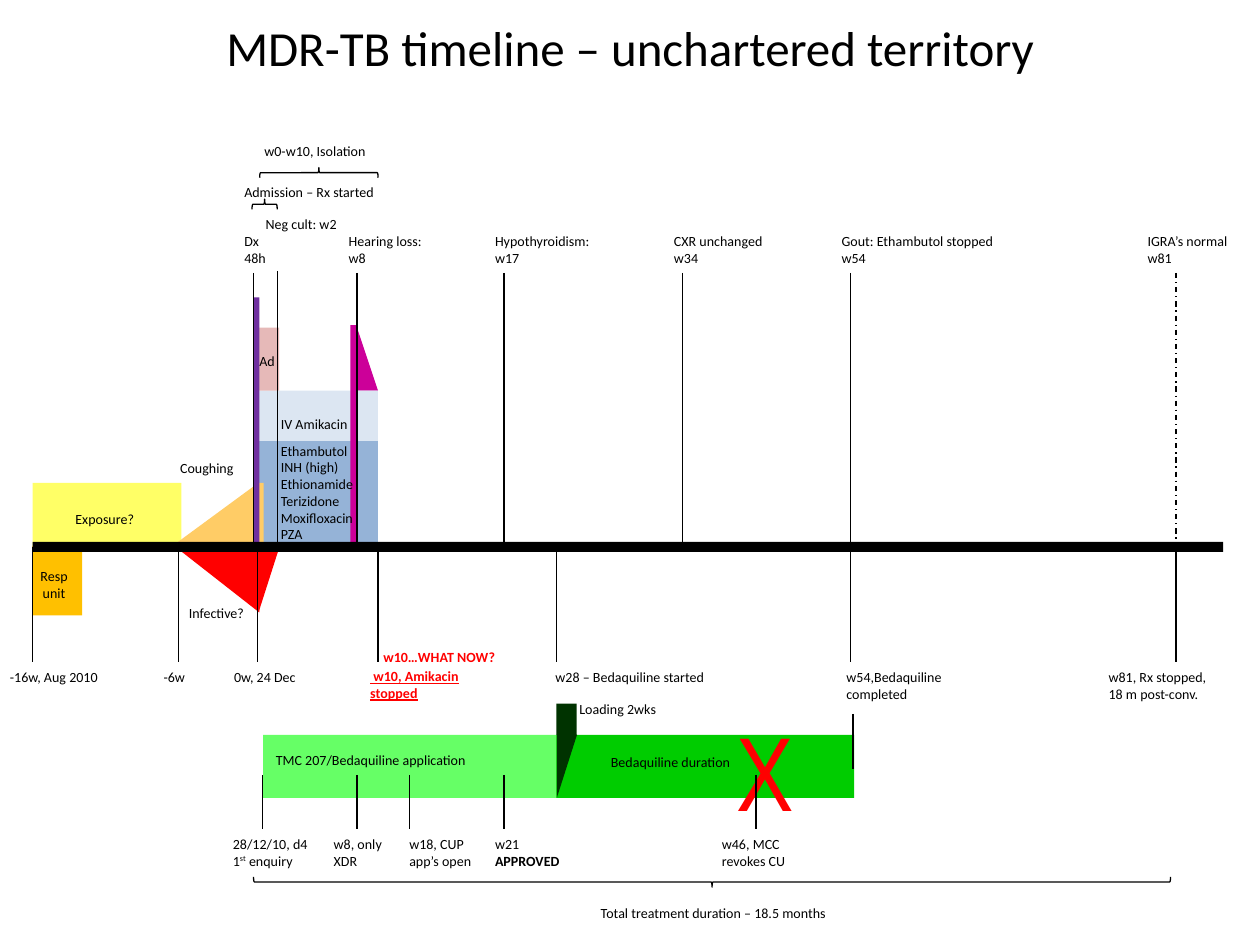
from dataclasses import dataclass

from lxml.etree import SubElement
from pptx import Presentation
from pptx.dml.color import RGBColor
from pptx.enum.dml import MSO_LINE
from pptx.enum.shapes import MSO_CONNECTOR, MSO_SHAPE
from pptx.enum.text import MSO_ANCHOR, MSO_AUTO_SIZE, PP_ALIGN
from pptx.oxml.ns import qn
from pptx.util import Pt


@dataclass(frozen=True)
class Theme:
    """Colours, fonts and sizes of the slide."""
    font: str = "Calibri"
    mark_font: str = "Arial Narrow"
    title: int = 28
    label: int = 8
    mark: int = 60
    line: float = 0.75
    black: str = "000000"
    red: str = "FF0000"
    magenta: str = "CC0099"
    pale_blue: str = "DCE6F2"
    blue: str = "95B3D7"
    yellow: str = "FFFF66"
    orange: str = "FFCC66"
    gold: str = "FFC000"
    pink: str = "E6B9B8"
    purple: str = "7030A0"
    light_green: str = "66FF66"
    green: str = "00CC00"
    dark_green: str = "003300"


T = Theme()
ROW_ABOVE, ROW_BELOW, ROW_ACCESS = 129.6, 378.4, 473.8

BLOCKS = [
    (MSO_SHAPE.RIGHT_TRIANGLE, (204, 187.2, 12, 36), 0, T.magenta),
    (MSO_SHAPE.RECTANGLE, (148, 223.2, 68, 36), 0, T.pale_blue),
    (MSO_SHAPE.RECTANGLE, (148, 252, 68, 60), 0, T.blue),
    (MSO_SHAPE.RECTANGLE, (18.6, 276, 85, 36), 0, T.yellow),
    (MSO_SHAPE.RIGHT_TRIANGLE, (105, 269.5, 36, 49), 270, T.orange),
    (MSO_SHAPE.RECTANGLE, (18.6, 312, 28.4, 39.6), 0, T.gold),
    (MSO_SHAPE.RECTANGLE, (148, 187.2, 11.5, 36), 0, T.pink),
    (MSO_SHAPE.RECTANGLE, (147, 276, 3.6, 36), 0, T.orange),
    (MSO_SHAPE.RECTANGLE, (144.6, 170, 3.6, 142), 0, T.purple),
    (MSO_SHAPE.RECTANGLE, (150.3, 420, 170, 36), 0, T.light_green),
    (MSO_SHAPE.RECTANGLE, (318, 420, 170.2, 36), 0, T.green),
    (MSO_SHAPE.RECTANGLE, (318, 402, 11.5, 18), 0, T.dark_green),
    (MSO_SHAPE.RIGHT_TRIANGLE, (306, 432, 36, 11.5), 90, T.dark_green),
    (MSO_SHAPE.RECTANGLE, (200.2, 185.8, 3.8, 127.2), 0, T.magenta),
    (MSO_SHAPE.RIGHT_TRIANGLE, (102.2, 314, 46, 36), 180, T.red),
    (MSO_SHAPE.RIGHT_TRIANGLE, (135.5, 326.2, 36, 11.5), 90, T.red),
]

BRACES = [
    ((148.3, 109.5, 5.8, 14.4), 90),
    ((179.3, 64.8, 5.8, 67.7), 90),
    ((404, 242, 5.8, 524), 270),
]

EVENTS = {
    ROW_ABOVE: [
        (132.5, 27, ["Dx", "48h"]),
        (192.2, 64, ["Hearing loss:", "w8"]),
        (275.8, 75, ["Hypothyroidism:", "w17"]),
        (378, 74, ["CXR unchanged", "w34"]),
        (473.8, 109.5, ["Gout: Ethambutol stopped", "w54"]),
        (648.7, 67, ["IGRA’s normal", "w81"]),
    ],
    ROW_BELOW: [
        (-1.4, 71.3, ["-16w, Aug 2010"]),
        (86.4, 27.4, ["-6w"]),
        (126.7, 55.4, ["0w, 24 Dec"]),
        (310.3, 110.2, ["w28 – Bedaquiline started"]),
        (476.6, 76.3, ["w54,Bedaquiline", "completed"]),
        (626.4, 77, ["w81, Rx stopped,", "18 m post-conv."]),
    ],
    ROW_ACCESS: [
        (126, 59.8, ["28/12/10, d4", [("1", {}), ("st", {"baseline": "30000"}), (" enquiry", {})]]),
        (183.6, 44.6, ["w8, only", "XDR"]),
        (226.8, 54.7, ["w18, CUP", "app’s open"]),
        (275.8, 59.8, ["w21", [("APPROVED", {"bold": True})]]),
        (405.4, 56.9, ["w46, MCC", "revokes CU"]),
    ],
}

NOTES = [
    (144, 77.8, 77, ["w0-w10, Isolation"]),
    (132.5, 101.5, 98, ["Admission – Rx started"]),
    (144.7, 119.5, 55.4, ["Neg cult: w2"]),
    (36, 288, 53.3, ["Exposure?"]),
    (95.8, 259.2, 49.7, ["Coughing"]),
    (100.8, 342, 49.7, ["Infective?"]),
    (141.1, 198, 24.5, ["Ad"]),
    (153.4, 234, 75, ["IV Amikacin"]),
    (153.4, 249.1, 75, ["Ethambutol", "INH (high)", "Ethionamide", "Terizidone", "Moxifloxacin", "PZA"]),
    (150.5, 426.2, 134, ["TMC 207/Bedaquiline application"]),
    (342, 427, 90.7, ["Bedaquiline duration"]),
    (324, 396.7, 64, ["Loading 2wks"]),
    (336.2, 513.4, 157, ["Total treatment duration – 18.5 months"]),
]

MARKER_ROWS = [
    ((156, 312), (144.7, 204, 288, 390, 486)),
    ((154.8, 310.3), (158.4,)),
    ((312.5, 378), (18.7, 102.2, 147, 216, 318, 486, 672)),
    ((442.8, 473.8), (150, 204, 234, 288, 432)),
    ((408, 439.2), (487.5,)),
]


def set_font(r, **fmt):
    """Format a run with the label style and any overrides."""
    baseline = fmt.pop("baseline", None)
    color = fmt.pop("color", T.black)
    for name, value in {"name": T.font, "size": Pt(T.label), **fmt}.items():
        setattr(r.font, name, value)
    r.font.color.rgb = RGBColor.from_string(color)
    if baseline:
        r._r.get_or_add_rPr().set("baseline", baseline)


def add_title(s, text):
    """Place the slide title."""
    sp = s.shapes.title
    box = {"left": 36, "top": -18, "width": 648, "height": 90}
    for name, value in box.items():
        setattr(sp, name, Pt(value))
    sp.text_frame.vertical_anchor = MSO_ANCHOR.MIDDLE
    p = sp.text_frame.paragraphs[0]
    p.alignment = PP_ALIGN.CENTER
    r = p.add_run()
    r.text = text
    set_font(r, size=Pt(T.title))


def add_block(s, kind, box, rotation, color):
    """Add a filled shape without an outline."""
    sp = s.shapes.add_shape(kind, *map(Pt, box))
    sp.rotation = rotation
    sp.shadow.inherit = False
    sp.fill.solid()
    sp.fill.fore_color.rgb = RGBColor.from_string(color)
    sp.line.fill.background()


def add_brace(s, box, rotation):
    """Add a rotated brace spanning a period."""
    sp = s.shapes.add_shape(MSO_SHAPE.LEFT_BRACE, *map(Pt, box))
    sp.rotation = rotation
    sp.shadow.inherit = False
    sp.fill.background()
    sp.line.color.rgb = RGBColor.from_string(T.black)
    sp.line.width = Pt(T.line)


def add_label(s, x, y, width, lines, align=PP_ALIGN.LEFT, wrap=False, **fmt):
    """Add a text box with one paragraph per line."""
    height = 7.2 + 1.22 * T.label * len(lines)
    tf = s.shapes.add_textbox(Pt(x), Pt(y), Pt(width), Pt(height)).text_frame
    tf.word_wrap = wrap
    tf.auto_size = MSO_AUTO_SIZE.SHAPE_TO_FIT_TEXT
    for i, line in enumerate(lines):
        p = tf.add_paragraph() if i else tf.paragraphs[0]
        p.alignment = align
        for text, extra in [(line, {})] if isinstance(line, str) else line:
            r = p.add_run()
            r.text = text
            set_font(r, **{**fmt, **extra})


def add_marker(s, x, top, bottom, dash=None):
    """Add a vertical line at a moment in time."""
    cx = s.shapes.add_connector(MSO_CONNECTOR.STRAIGHT, Pt(x), Pt(top), Pt(x), Pt(bottom))
    cx.line.color.rgb = RGBColor.from_string(T.black)
    cx.line.width = Pt(T.line)
    if dash:
        cx.line.dash_style = dash
    SubElement(cx._element.spPr, qn("a:effectLst"))


def main():
    """Build the timeline slide."""
    prs = Presentation()
    prs.slide_width, prs.slide_height = Pt(720), Pt(540)
    s = prs.slides.add_slide(prs.slide_layouts[5])
    add_title(s, "MDR-TB timeline – unchartered territory")
    for block in BLOCKS:
        add_block(s, *block)
    for brace in BRACES:
        add_brace(s, *brace)
    for y, events in EVENTS.items():
        for x, width, lines in events:
            add_label(s, x, y, width, lines)
    for note in NOTES:
        add_label(s, *note)
    add_label(s, 15.8, 321, 30.2, ["Resp", "unit"], align=PP_ALIGN.CENTER)
    add_label(s, 210.2, 367.2, 102, [" w10…WHAT NOW?"], wrap=True, bold=True, color=T.red)
    add_label(s, 204.5, 378, 102, [" w10, Amikacin", "stopped"], wrap=True,
              bold=True, underline=True, color=T.red)
    add_label(s, 414, 400.3, 37.4, ["X"], name=T.mark_font, size=Pt(T.mark), color=T.red)
    for (top, bottom), places in MARKER_ROWS:
        for x in places:
            add_marker(s, x, top, bottom)
    add_marker(s, 672, 156, 309, MSO_LINE.DASH_DOT)
    add_block(s, MSO_SHAPE.RECTANGLE, (18.6, 309.6, 680.4, 5.8), 0, T.black)
    prs.save("out.pptx")


if __name__ == "__main__":
    main()
